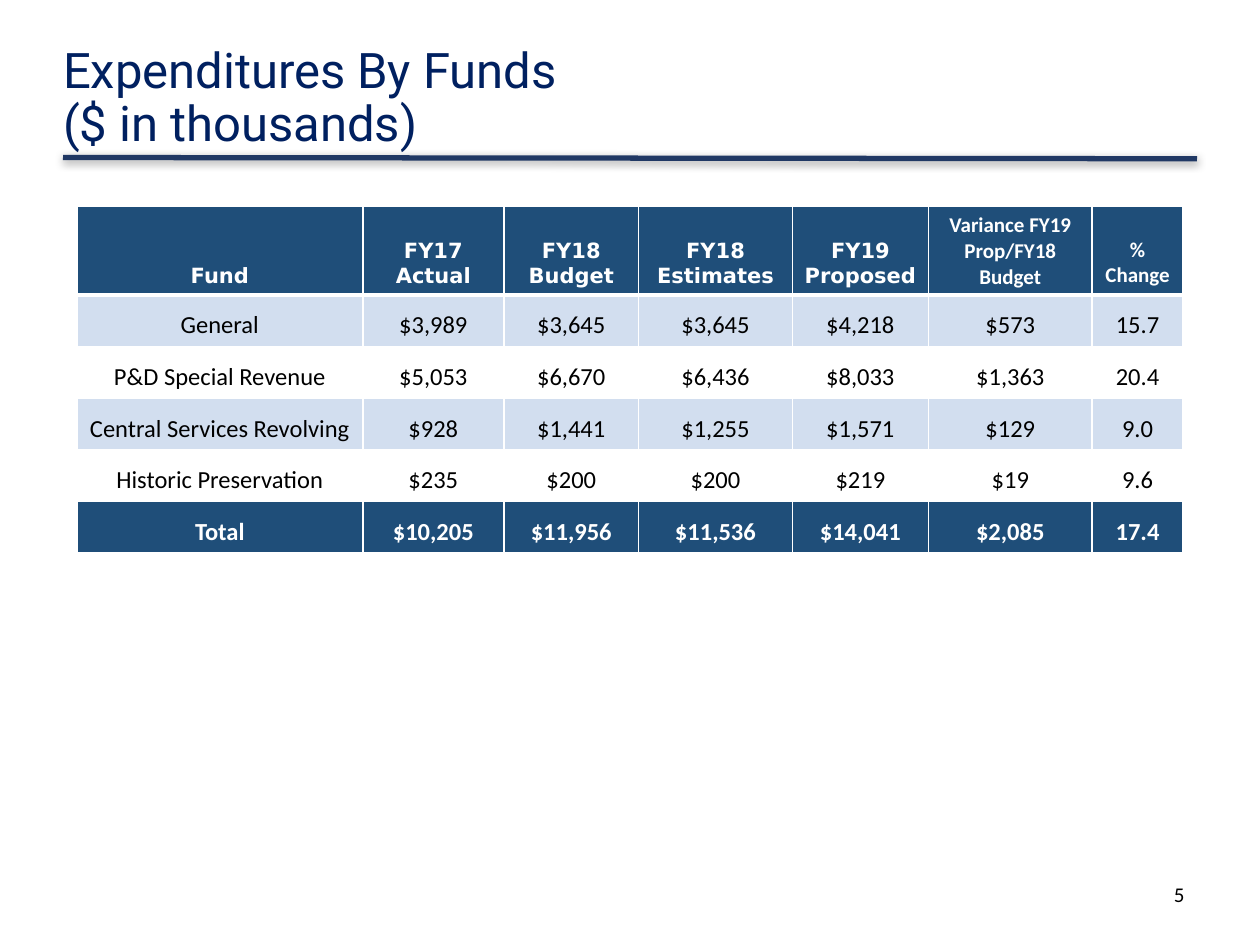
from lxml import etree
from pptx import Presentation
from pptx.dml.color import RGBColor
from pptx.enum.shapes import MSO_CONNECTOR
from pptx.enum.text import MSO_ANCHOR, MSO_AUTO_SIZE, PP_ALIGN
from pptx.oxml.ns import qn
from pptx.util import Inches, Pt

LEFT, CENTER, RIGHT = PP_ALIGN.LEFT, PP_ALIGN.CENTER, PP_ALIGN.RIGHT
TOP, MIDDLE, BOTTOM = MSO_ANCHOR.TOP, MSO_ANCHOR.MIDDLE, MSO_ANCHOR.BOTTOM
STRAIGHT = MSO_CONNECTOR.STRAIGHT
NO_AUTOFIT = MSO_AUTO_SIZE.NONE
TITLE_ONLY = 5

COLORS = {
    "title": "002060",
    "rule": "203864",
    "dark": "1F4E79",
    "band": "D2DEEF",
    "white": "FFFFFF",
    "black": "000000",
}

FORMATS = {
    "title": {"name": "Roboto", "size": Pt(28), "bold": False},
    "number": {"name": "Calibri", "size": Pt(12), "bold": False},
    "header": {"name": "DejaVu Sans", "size": Pt(12), "bold": True},
    "narrow header": {"name": "Calibri", "size": Pt(12), "bold": True},
    "body": {"name": "Calibri", "size": Pt(14), "bold": False},
    "total": {"name": "Calibri", "size": Pt(14), "bold": True},
}

COLUMN_WIDTHS = [2.27, 1.12, 1.07, 1.22, 1.08, 1.3, 0.72]
HEADER_HEIGHT, ROW_HEIGHT = 0.7, 0.41
FUND_ROWS = [
    ["Fund", "FY17\nActual", "FY18\nBudget", "FY18\nEstimates", "FY19\nProposed",
     "Variance FY19 Prop/FY18 Budget", "%\nChange"],
    ["General", "$3,989", "$3,645", "$3,645", "$4,218", "$573", "15.7"],
    ["P&D Special Revenue", "$5,053", "$6,670", "$6,436", "$8,033", "$1,363", "20.4"],
    ["Central Services Revolving", "$928", "$1,441", "$1,255", "$1,571", "$129", "9.0"],
    ["Historic Preservation", "$235", "$200", "$200", "$219", "$19", "9.6"],
    ["Total", "$10,205", "$11,956", "$11,536", "$14,041", "$2,085", "17.4"],
]
FIRST_NARROW_COLUMN = 5


def rgb(name):
    return RGBColor.from_string(COLORS[name])


class SlideBuilder:
    def __init__(self, presentation):
        self.slide = presentation.slides.add_slide(presentation.slide_layouts[TITLE_ONLY])

    def set_text(self, frame, text, style, color, alignment):
        frame.text = text
        for paragraph in frame.paragraphs:
            paragraph.alignment = alignment
            for run in paragraph.runs:
                for attribute, value in FORMATS[style].items():
                    setattr(run.font, attribute, value)
                run.font.color.rgb = rgb(color)

    def title(self, text, left, top, width, height):
        shape = self.slide.shapes.title
        shape.left, shape.top = Inches(left), Inches(top)
        shape.width, shape.height = Inches(width), Inches(height)
        frame = shape.text_frame
        frame.margin_left = frame.margin_right = 0
        frame.margin_top = frame.margin_bottom = 0
        frame.auto_size = NO_AUTOFIT
        frame.vertical_anchor = MIDDLE
        self.set_text(frame, text, "title", "title", LEFT)
        frame.paragraphs[0].line_spacing = 0.9

    def rule(self, left, top, right, bottom):
        line = self.slide.shapes.add_connector(
            STRAIGHT, Inches(left), Inches(top), Inches(right), Inches(bottom))
        line.line.color.rgb = rgb("rule")
        line.line.width = Pt(3)
        effects = etree.SubElement(line._element.spPr, qn("a:effectLst"))
        shadow = etree.SubElement(effects, qn("a:outerShdw"), blurRad=str(Pt(5)),
                                  dist=str(Pt(1.6)), dir="5400000", rotWithShape="0")
        color = etree.SubElement(shadow, qn("a:srgbClr"), val=COLORS["black"])
        etree.SubElement(color, qn("a:alpha"), val="38000")

    def page_number(self, text, left, top, width, height):
        box = self.slide.shapes.add_textbox(
            Inches(left), Inches(top), Inches(width), Inches(height))
        box.text_frame.word_wrap = True
        box.text_frame.vertical_anchor = TOP
        self.set_text(box.text_frame, text, "number", "black", RIGHT)

    def borders(self, cell, widths):
        properties = cell._tc.get_or_add_tcPr()
        for side, width in widths.items():
            border = etree.SubElement(properties, qn(f"a:ln{side}"), w=str(Pt(width)))
            fill = etree.SubElement(border, qn("a:solidFill"))
            etree.SubElement(fill, qn("a:srgbClr"), val=COLORS["white"])

    def table(self, rows, widths, left, top):
        heights = [HEADER_HEIGHT] + [ROW_HEIGHT] * (len(rows) - 1)
        frame = self.slide.shapes.add_table(
            len(rows), len(widths), Inches(left), Inches(top),
            Inches(sum(widths)), Inches(sum(heights)))
        table = frame.table
        table.horz_banding = False
        for column, width in zip(table.columns, widths):
            column.width = Inches(width)
        for index, (row, height) in enumerate(zip(rows, heights)):
            table.rows[index].height = Inches(height)
            header, total = index == 0, index == len(rows) - 1
            fill = "dark" if header or total else "band" if index % 2 else "white"
            color = "white" if header or total else "black"
            for position, text in enumerate(row):
                style = "total" if total else "body"
                if header:
                    style = "narrow header" if position >= FIRST_NARROW_COLUMN else "header"
                cell = table.cell(index, position)
                cell.margin_left = cell.margin_right = Inches(0.05)
                cell.vertical_anchor = BOTTOM
                self.borders(cell, {"L": 1, "R": 1, "T": 3 if index == 1 else 1,
                                    "B": 3 if header else 1})
                cell.fill.solid()
                cell.fill.fore_color.rgb = rgb(fill)
                self.set_text(cell.text_frame, text, style, color, CENTER)


def main():
    presentation = Presentation()
    presentation.slide_width, presentation.slide_height = Inches(10), Inches(7.5)
    builder = SlideBuilder(presentation)
    builder.rule(0.5, 1.25, 9.5, 1.26)
    builder.title("Expenditures By Funds\v($ in thousands)", 0.5, 0.33, 6.86, 0.92)
    builder.page_number("5", 7.17, 6.95, 2.33, 0.4)
    builder.table(FUND_ROWS, COLUMN_WIDTHS, 0.61, 1.64)
    presentation.save("out.pptx")


if __name__ == "__main__":
    main()
